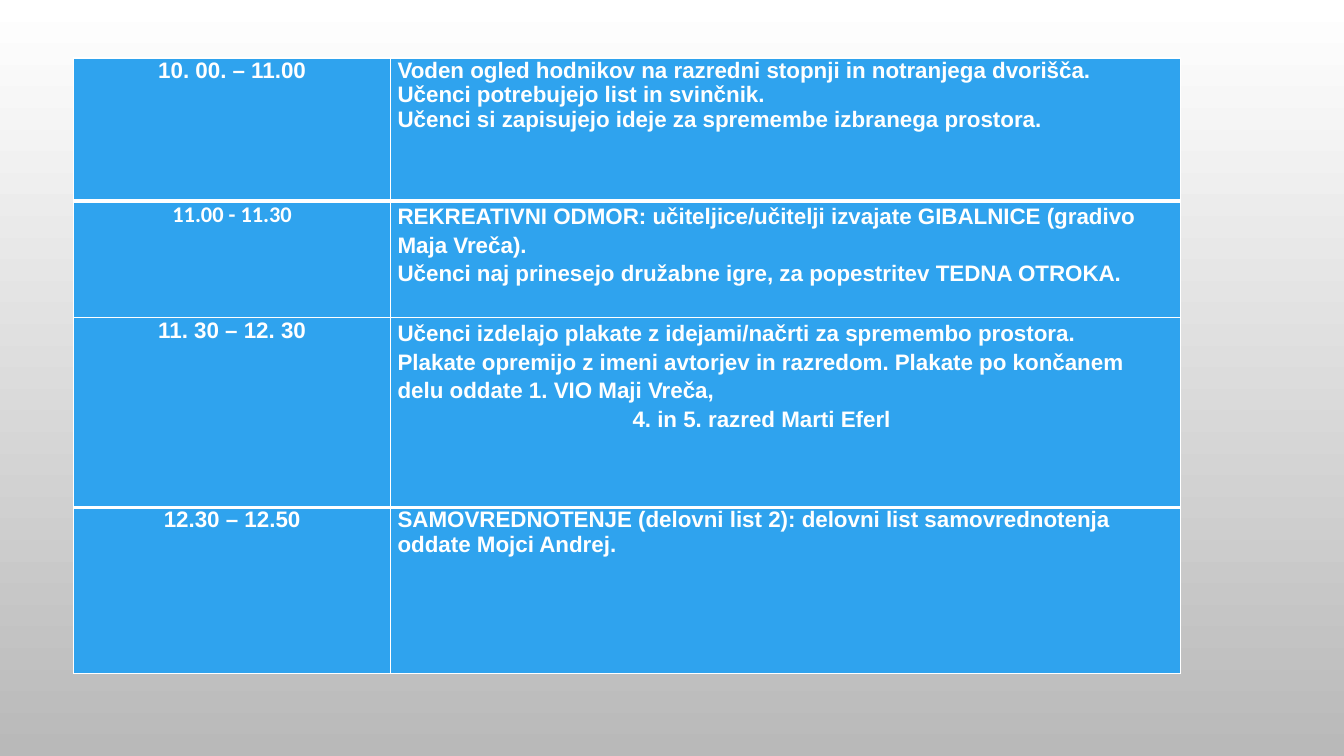
import pptx
import pptx.util
import pptx.dml.color
import pptx.enum.text
import pptx.oxml
import pptx.oxml.ns
from pptx.util import Cm, Pt

# Content: time, font of the time, line spacing, activity lines
SCHEDULE = [
    ("10. 00. – 11.00", "Arial", 1.0, [
        "Voden ogled hodnikov na razredni stopnji in notranjega dvorišča.",
        "Učenci potrebujejo list in svinčnik.",
        "Učenci si zapisujejo ideje za spremembe izbranega prostora."]),
    ("11.00 - 11.30", "Calibri", 1.15, [
        "REKREATIVNI ODMOR: učiteljice/učitelji izvajate GIBALNICE (gradivo Maja Vreča).",
        "Učenci naj prinesejo družabne igre, za popestritev TEDNA OTROKA."]),
    ("11. 30 – 12. 30", "Arial", 1.15, [
        "Učenci izdelajo plakate z idejami/načrti za spremembo prostora.",
        "Plakate opremijo z imeni avtorjev in razredom. Plakate po končanem delu oddate 1. VIO Maji Vreča,",
        "4. in 5. razred Marti Eferl"]),
    ("12.30 – 12.50", "Arial", 1.0, [
        "SAMOVREDNOTENJE (delovni list 2): delovni list samovrednotenja oddate Mojci Andrej."]),
]
INDENTED_LINE = "4. in 5. razred Marti Eferl"
COLORS = {"white": "FFFFFF", "gray": "B9B9B9", "blue": "2FA3EE"}
COLUMN_WIDTHS = [Cm(7.98), Cm(19.91)]
ROW_HEIGHTS = [Cm(3.6), Cm(2.95), Cm(4.78), Cm(4.19)]
THICK_RULES = {1, 3}  # horizontal rules, counted from the top edge


def color(name):
    return pptx.dml.color.RGBColor.from_string(COLORS[name])


def set_borders(cell, top, bottom):
    properties = cell._tc.get_or_add_tcPr()
    widths = {"lnL": 1, "lnR": 1, "lnT": top, "lnB": bottom}
    for position, (side, width) in enumerate(widths.items()):
        line = pptx.oxml.parse_xml(
            f'<a:{side} {pptx.oxml.ns.nsdecls("a")} w="{Pt(width)}">'
            f'<a:solidFill><a:srgbClr val="{COLORS["white"]}"/></a:solidFill></a:{side}>')
        properties.insert(position, line)


def fill_cell(cell, lines, font_name, spacing, alignment):
    cell.margin_left = cell.margin_right = Cm(0.18)
    cell.margin_top = cell.margin_bottom = 0
    cell.fill.solid()
    cell.fill.fore_color.rgb = color("blue")
    cell.text_frame.text = "\n".join(lines)
    for para in cell.text_frame.paragraphs:
        para.alignment = alignment
        para.line_spacing = spacing
        if para.text == INDENTED_LINE:
            para._p.get_or_add_pPr().set("marL", str(Cm(5.92)))
        for span in para.runs:
            span.font.name = font_name
            span.font.size = Pt(16)
            span.font.bold = True
            span.font.color.rgb = color("white")


def main():
    deck = pptx.Presentation()
    deck.slide_width, deck.slide_height = Cm(33.87), Cm(19.05)
    page = deck.slides.add_slide(deck.slide_layouts[6])

    # Background running from white down to gray
    background = page.background.fill
    background.gradient()
    background.gradient_angle = 270
    for stop, name, position in zip(background.gradient_stops, ("white", "gray"), (0, 1)):
        stop.color.rgb = color(name)
        stop.position = position

    # Timetable
    table = page.shapes.add_table(
        len(SCHEDULE), 2, Cm(1.86), Cm(1.46), sum(COLUMN_WIDTHS), sum(ROW_HEIGHTS)).table
    for column, width in zip(table.columns, COLUMN_WIDTHS):
        column.width = width
    align = pptx.enum.text.PP_ALIGN
    for index, (time, time_font, spacing, activities) in enumerate(SCHEDULE):
        table.rows[index].height = ROW_HEIGHTS[index]
        time_cell, activity_cell = table.rows[index].cells
        fill_cell(time_cell, [time], time_font, 1.0, align.CENTER)
        fill_cell(activity_cell, activities, "Arial", spacing, align.LEFT)
        top, bottom = (3 if rule in THICK_RULES else 1 for rule in (index, index + 1))
        for cell in (time_cell, activity_cell):
            set_borders(cell, top, bottom)

    deck.save("out.pptx")


if __name__ == "__main__":
    main()
